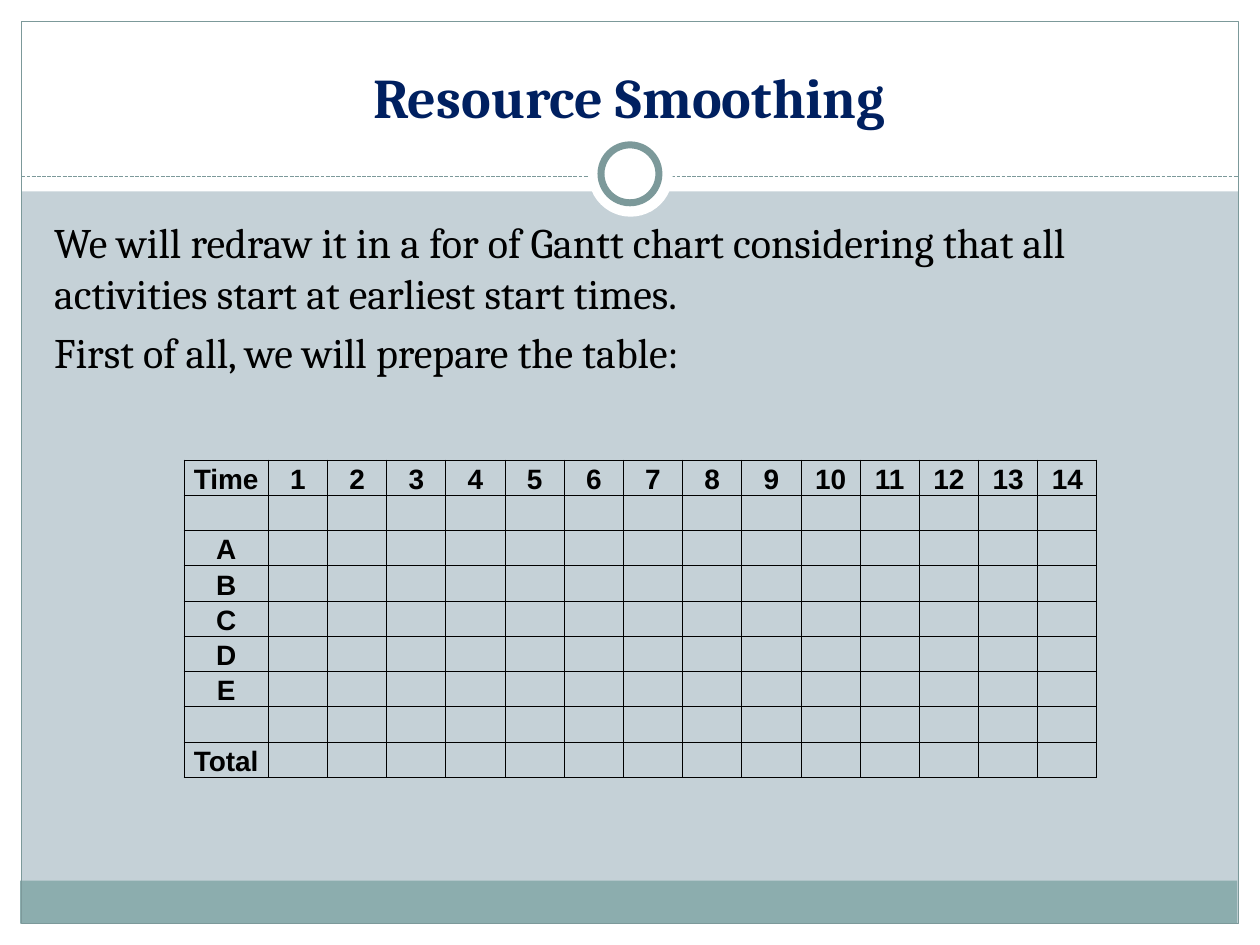
from dataclasses import dataclass
from lxml.etree import SubElement as Sub
from pptx import Presentation as Deck
from pptx.dml.color import RGBColor as Color
from pptx.enum.dml import MSO_LINE_DASH_STYLE as Dash
from pptx.enum.shapes import MSO_CONNECTOR as Link, MSO_SHAPE as Kind
from pptx.enum.text import MSO_ANCHOR as Anchor, MSO_AUTO_SIZE as Fit, PP_ALIGN as Align
from pptx.oxml.ns import qn
from pptx.util import Inches, Pt


@dataclass(frozen=True)
class Theme:
    back: str = "C5D1D7"
    white: str = "FFFFFF"
    band: str = "8CADAE"
    edge: str = "7C999A"
    navy: str = "002060"
    ink: str = "000000"
    serif: str = "Cambria"
    sans: str = "Arial"
    head: int = 32
    text: int = 24
    cell: int = 16
    tiny: int = 8


def put(item, **vals):
    for name, val in vals.items():
        setattr(item, name, val)


class Page:
    def __init__(self, deck, theme):
        self.theme = theme
        self.slide = deck.slides.add_slide(deck.slide_layouts[1])
        fill = self.slide.background.fill
        fill.solid()
        fill.fore_color.rgb = Color.from_string(theme.back)

    def font(self, font, name, size, color, bold=False):
        put(font, name=name, size=Pt(size), bold=bold)
        font.color.rgb = Color.from_string(color)

    def shape(self, kind, box, fill=None, line=None, width=0.75):
        item = self.slide.shapes.add_shape(kind, *map(Inches, box))
        item.shadow.inherit = False
        if fill:
            item.fill.solid()
            item.fill.fore_color.rgb = Color.from_string(fill)
        else:
            item.fill.background()
        if line:
            item.line.color.rgb = Color.from_string(line)
            item.line.width = Pt(width)
        else:
            item.line.fill.background()

    def rule(self, start, end):
        item = self.slide.shapes.add_connector(Link.STRAIGHT, *map(Inches, start + end))
        item.line.color.rgb = Color.from_string(self.theme.edge)
        put(item.line, width=Pt(0.75), dash_style=Dash.SQUARE_DOT)
        Sub(item.element.spPr, qn("a:effectLst"))

    def place(self, item, box, anchor):
        item.element.getparent().append(item.element)
        left, top, width, height = map(Inches, box)
        put(item, left=left, top=top, width=width, height=height)
        put(item.text_frame, word_wrap=True, auto_size=Fit.NONE, vertical_anchor=anchor)

    def title(self, text, box):
        item = self.slide.shapes.title
        self.place(item, box, Anchor.BOTTOM)
        para = item.text_frame.paragraphs[0]
        para.alignment = Align.CENTER
        run = para.add_run()
        run.text = text
        self.font(run.font, self.theme.serif, self.theme.head, self.theme.navy, True)

    def body(self, lines, box):
        item = self.slide.placeholders[1]
        self.place(item, box, Anchor.TOP)
        item.text_frame.text = "\n".join(lines)
        for para in item.text_frame.paragraphs:
            put(para, alignment=Align.LEFT, space_before=Pt(5))
            props = para._p.get_or_add_pPr()
            props.set("marL", "0")
            props.set("indent", "0")
            Sub(props, qn("a:buNone"))
            self.font(para.runs[0].font, self.theme.serif, self.theme.text, self.theme.ink)

    def border(self, cell, sides):
        props = cell._tc.get_or_add_tcPr()
        for spot, side in enumerate("LRTB"):
            line = Sub(props, qn("a:ln" + side), w=str(Pt(0.5)))
            if side in sides:
                Sub(Sub(line, qn("a:solidFill")), qn("a:srgbClr"), val=self.theme.ink)
            else:
                Sub(line, qn("a:noFill"))
            props.insert(spot, line)

    def table(self, rows, spot, wide, high):
        box = spot + (sum(wide), sum(high))
        frame = self.slide.shapes.add_table(len(rows), len(wide), *map(Inches, box))
        grid = frame.table
        put(grid, first_row=False, horz_banding=False)
        for col, width in zip(grid.columns, wide):
            col.width = Inches(width)
        for row, height in zip(grid.rows, high):
            row.height = Inches(height)
        last = len(rows) - 1
        for y, row in enumerate(rows):
            sides = {0: "B", last: "T"}.get(y, "LRTB")
            for x in range(len(wide)):
                self.cell(grid.cell(y, x), row[x] if x < len(row) else "", sides)

    def cell(self, cell, text, sides):
        gap = Inches(0.01)
        put(cell, margin_left=gap, margin_right=gap, margin_top=gap, margin_bottom=0,
            vertical_anchor=Anchor.BOTTOM)
        cell.fill.background()
        self.border(cell, sides)
        para = cell.text_frame.paragraphs[0]
        para.alignment = Align.CENTER
        if text:
            run = para.add_run()
            run.text = text
            self.font(run.font, self.theme.sans, self.theme.cell, self.theme.ink, True)
        else:
            Sub(para._p, qn("a:endParaRPr"), sz=str(self.theme.tiny * 100))


def main():
    deck = Deck()
    put(deck, slide_width=Inches(10), slide_height=Inches(7.5))
    theme = Theme()
    page = Page(deck, theme)

    for box in ((0, 7.33, 10, 0.17), (0, 0, 10, 1.52),
                (0, 0, 0.17, 7.5), (9.83, 0, 0.17, 7.5)):
        page.shape(Kind.RECTANGLE, box, theme.white)
    page.shape(Kind.RECTANGLE, (0.16, 6.99, 9.66, 0.34), theme.band)
    page.shape(Kind.RECTANGLE, (0.17, 0.17, 9.66, 7.16), line=theme.edge)
    page.rule((0.17, 1.4), (9.83, 1.4))
    page.shape(Kind.OVAL, (4.67, 1.05, 0.67, 0.67), theme.white)
    page.shape(Kind.OVAL, (4.77, 1.15, 0.46, 0.46), theme.white, theme.edge, 4)

    page.title("Resource Smoothing", (0.33, 0.25, 9.33, 0.83))
    page.body((
        "We will redraw it in a for of Gantt chart considering that all "
        "activities start at earliest start times.",
        "First of all, we will prepare the table:",
    ), (0.33, 1.67, 9.36, 2.32))

    times = [str(n) for n in range(1, 15)]
    rows = [[], ["Time"] + times, [], *([name] for name in "ABCDE"), [], ["Total"], []]
    page.table(rows, (1.46, 3.44), [0.67] + [0.47] * len(times),
               [0.21] + [0.28] * 9 + [0.21])
    deck.save("out.pptx")


if __name__ == "__main__":
    main()
